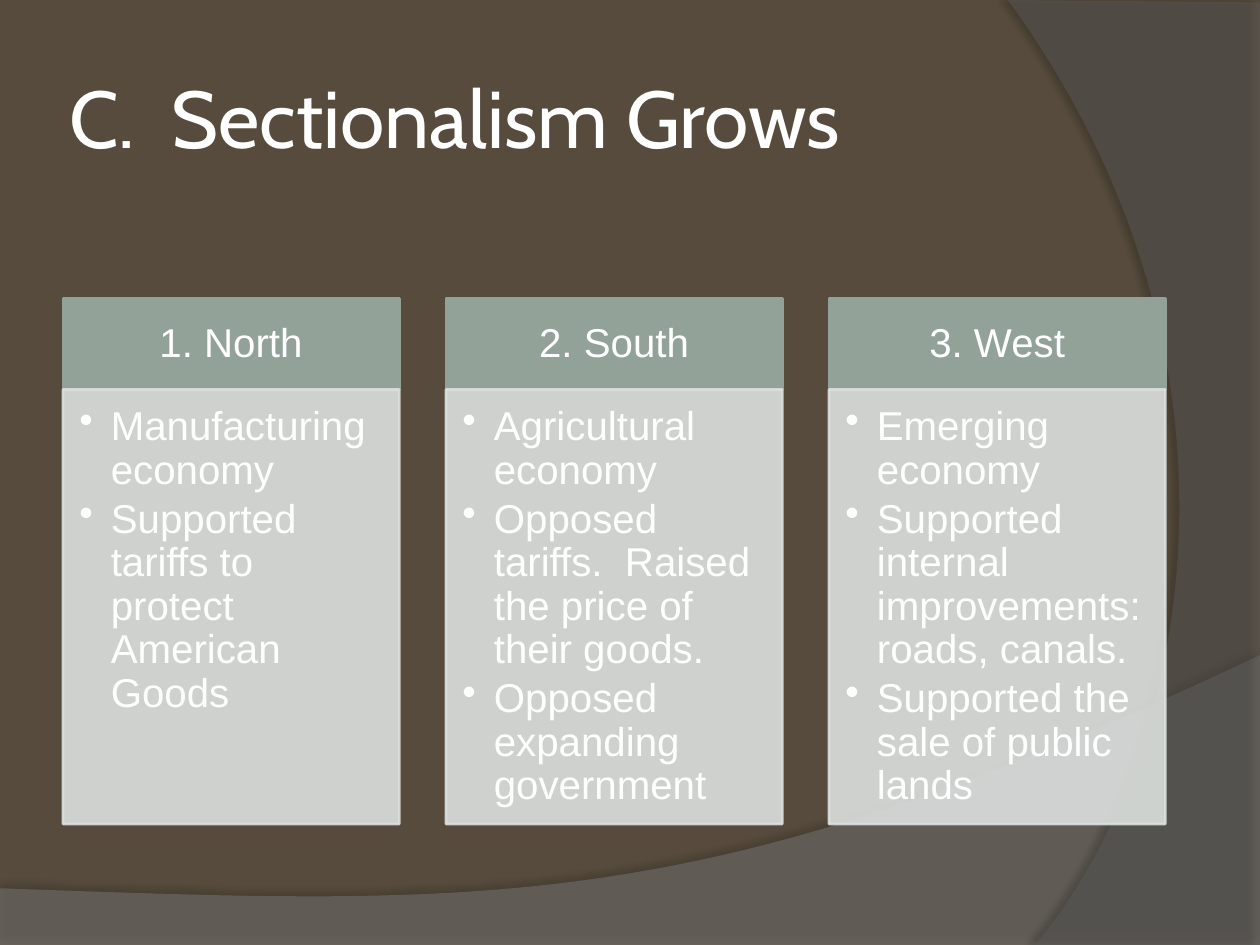
from lxml.etree import SubElement
from pptx import Presentation
from pptx.dml.color import RGBColor
from pptx.enum.shapes import MSO_SHAPE
from pptx.enum.text import MSO_ANCHOR, PP_ALIGN
from pptx.oxml.ns import qn
from pptx.util import Emu, Inches, Pt

WHITE, HEADER, PANEL = "FFFFFF", "93A299", "DCE0DE"
COLUMNS = [
    ("1. North", ["Manufacturing economy",
                  "Supported tariffs to protect American Goods"]),
    ("2. South", ["Agricultural economy",
                  "Opposed tariffs.  Raised the price of their goods.",
                  "Opposed expanding government"]),
    ("3. West", ["Emerging economy",
                 "Supported internal improvements: roads, canals.",
                 "Supported the sale of public lands"]),
]


def color(hex_string):
    return RGBColor.from_string(hex_string)


def paint(fill, hex_string, opacity=100):
    """Give a fill a solid colour, with opacity in percent."""
    fill.solid()
    fill.fore_color.rgb = color(hex_string)
    if opacity < 100:
        swatch = fill._xPr.find(qn("a:solidFill"))[0]
        SubElement(swatch, qn("a:alpha"), val=str(opacity * 1000))


def curve(start, control_1, control_2, end, steps=48):
    """Points along a cubic curve, without its start."""
    points = []
    for step in range(1, steps + 1):
        t = step / steps
        weights = ((1 - t) ** 3, 3 * t * (1 - t) ** 2, 3 * t * t * (1 - t), t ** 3)
        corners = (start, control_1, control_2, end)
        points.append(tuple(sum(w * corner[axis] for w, corner in zip(weights, corners))
                            for axis in (0, 1)))
    return points


def add_wave(slide, points, fill, opacity, shadow_opacity, distance, direction):
    """Translucent background outline with a soft shadow; points in inches."""
    (left, top), *others = [(Inches(x), Inches(y)) for x, y in points]
    builder = slide.shapes.build_freeform(left, top)
    builder.add_line_segments(others, close=True)
    wave = builder.convert_to_shape()
    paint(wave.fill, fill, opacity)
    wave.line.fill.background()
    effects = SubElement(wave._element.spPr, qn("a:effectLst"))
    shadow = SubElement(effects, qn("a:outerShdw"), blurRad=str(Pt(4)),
                        dist=str(Pt(distance)), dir=str(direction * 60000),
                        algn="ctr", rotWithShape="0")
    shade = SubElement(shadow, qn("a:srgbClr"), val="000000")
    SubElement(shade, qn("a:alpha"), val=str(shadow_opacity * 1000))


def add_background(slide):
    paint(slide.background.fill, "564B3C")
    bottom = [(0, 7.05), (0, 7.5), (10, 7.5), (10, 5.2)]
    bottom += curve(bottom[-1], (5.59, 7.29), (3.91, 7.19), bottom[0])
    add_wave(slide, bottom, "7F7F7F", 45, 35, 3.5, 270)
    side = [(10, 0.02), (10, 7.5), (8.21, 7.5)]
    side += curve(side[-1], (9.35, 6.19), (10.18, 3), (8, 0))
    add_wave(slide, side, "5E5E5E", 40, 45, 4, 180)


def set_margins(frame, left, top, right, bottom):
    frame.margin_left, frame.margin_top = Inches(left), Inches(top)
    frame.margin_right, frame.margin_bottom = Inches(right), Inches(bottom)


def place_title(slide, text, left, top, width, height):
    title = slide.shapes.title
    title.left, title.top, title.width, title.height = left, top, width, height
    frame = title.text_frame
    frame.text = text
    frame.vertical_anchor = MSO_ANCHOR.MIDDLE
    set_margins(frame, 0.05, 0.05, 0.05, 0.05)
    paragraph = frame.paragraphs[0]
    paragraph.alignment = PP_ALIGN.LEFT
    style(paragraph, 46, "Cabin")
    # Bring the title in front of the waves
    slide.shapes._spTree.append(title._element)


def style(paragraph, size, name):
    font = paragraph.font
    font.size, font.name = Pt(size), name
    font.color.rgb = color(WHITE)


def add_box(slide, lines, fill, opacity, left, top, width, height):
    box = slide.shapes.add_shape(MSO_SHAPE.RECTANGLE, left, top, width, height)
    box.shadow.inherit = False
    paint(box.fill, fill, opacity)
    paint(box.line.fill, fill, opacity)
    box.line.width = Pt(1.5)
    frame = box.text_frame
    frame.word_wrap = True
    frame.text = "\n".join(lines)
    for paragraph in frame.paragraphs:
        paragraph.line_spacing = 0.9
        style(paragraph, 23, "Arial")
    return frame


def add_column(slide, heading, points, left, top, width, height):
    """Heading bar above a bulleted panel."""
    bar_height = Emu(int(height * 0.173))
    frame = add_box(slide, [heading], HEADER, 100, left, top, width, bar_height)
    frame.vertical_anchor = MSO_ANCHOR.MIDDLE
    set_margins(frame, 0.18, 0.1, 0.18, 0.1)
    frame.paragraphs[0].alignment = PP_ALIGN.CENTER

    frame = add_box(slide, points, PANEL, 90, left, top + bar_height,
                    width, height - bar_height)
    frame.vertical_anchor = MSO_ANCHOR.TOP
    set_margins(frame, 0.13, 0.13, 0.18, 0.2)
    for paragraph in frame.paragraphs:
        paragraph.alignment = PP_ALIGN.LEFT
        paragraph.space_after = Pt(3.3)
        properties = paragraph._p.get_or_add_pPr()
        properties.set("marL", str(Inches(0.25)))
        properties.set("indent", str(-Inches(0.25)))
        SubElement(properties, qn("a:buChar"), char="•")
        # Bullets come before the default run properties
        properties.append(properties.find(qn("a:defRPr")))


def add_columns(slide, columns, left, top, width, height, gap):
    column_width = (width - gap * (len(columns) - 1)) // len(columns)
    for index, (heading, points) in enumerate(columns):
        add_column(slide, heading, points, left + index * (column_width + gap),
                   top, column_width, height)


def main():
    presentation = Presentation()
    presentation.slide_width, presentation.slide_height = Inches(10), Inches(7.5)
    slide = presentation.slides.add_slide(presentation.slide_layouts[5])
    add_background(slide)
    place_title(slide, "C.  Sectionalism Grows",
                Inches(0.5), Inches(0.3), Inches(8.17), Inches(1.25))
    add_columns(slide, COLUMNS, Inches(0.5), Inches(2.37),
                Inches(8.75), Inches(4.17), gap=Inches(0.37))
    presentation.save("out.pptx")


if __name__ == "__main__":
    main()
